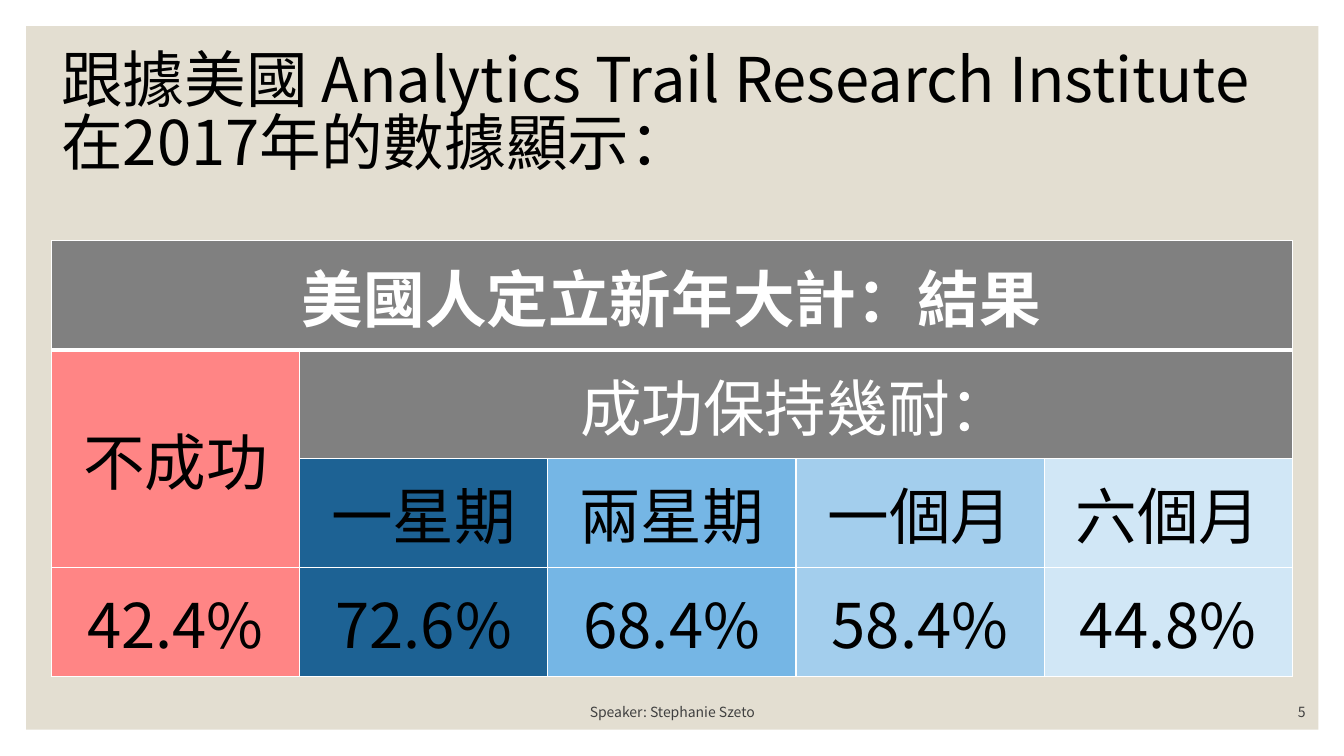
from dataclasses import dataclass
from typing import Any

from lxml import etree
from pptx import Presentation
from pptx import util as u
from pptx.dml.color import RGBColor
from pptx.enum import shapes, text
from pptx.oxml.ns import qn

FONT = "Noto Sans CJK SC"
LEFT, CENTER, RIGHT = text.PP_ALIGN.LEFT, text.PP_ALIGN.CENTER, text.PP_ALIGN.RIGHT
TOP, BOTTOM = text.MSO_ANCHOR.TOP, text.MSO_ANCHOR.BOTTOM
WHITE, BLACK, GREY, RED = "FFFFFF", "000000", "808080", "FF8585"


@dataclass
class Label:
    words: str
    left: float
    top: float
    width: float
    height: float
    size: float
    color: str
    align: Any = CENTER
    anchor: Any = BOTTOM
    after: float = 0
    line: float = 1.0


@dataclass
class Cell:
    words: str
    row: int
    col: int
    fill: str
    color: str = BLACK
    rows: int = 1
    cols: int = 1
    bold: bool = False


@dataclass
class Term:
    name: str
    share: str
    fill: str


LABELS = [
    Label("跟據美國 Analytics Trail Research Institute在2017年的數據顯示：",
          36.72, 33.84, 895.68, 400.32, 44, BLACK, LEFT, TOP, 10, 0.85),
    Label("Speaker: Stephanie Szeto", 275, 496.8, 410.4, 21.6, 10, "404040"),
    Label("5", 824.4, 496.8, 115.2, 21.6, 10, "404040", RIGHT),
]

TERMS = [
    Term("一星期", "72.6%", "1D6294"),
    Term("兩星期", "68.4%", "75B6E5"),
    Term("一個月", "58.4%", "A3CEED"),
    Term("六個月", "44.8%", "D1E7F6"),
]

ROWS, COLS = 4, len(TERMS) + 1


def paint(color: Any, code: str) -> None:
    color.rgb = RGBColor.from_string(code)


def fill(part: Any, code: str) -> None:
    part.fill.solid()
    paint(part.fill.fore_color, code)


def write(frame: Any, words: str, size: float, color: str,
          align: Any, bold: bool = False) -> Any:
    para = frame.paragraphs[0]
    para.text = words
    para.alignment = align
    font = para.font
    font.size, font.bold, font.name = u.Pt(size), bold, FONT
    paint(font.color, color)
    props = para._p.pPr.find(qn("a:defRPr"))
    etree.SubElement(props, qn("a:ea"), typeface=FONT)
    return para


def add_label(slide: Any, label: Label) -> None:
    box = slide.shapes.add_textbox(u.Pt(label.left), u.Pt(label.top),
                                   u.Pt(label.width), u.Pt(label.height))
    frame = box.text_frame
    frame.word_wrap = True
    frame.vertical_anchor = label.anchor
    para = write(frame, label.words, label.size, label.color, label.align)
    para.space_after = u.Pt(label.after)
    para.line_spacing = label.line


def add_edges(cell: Any, row: int) -> None:
    """White rules, with a heavy one under the heading row."""
    widths = {"L": 1, "R": 1, "T": 3 if row == 1 else 1, "B": 3 if row == 0 else 1}
    props = cell._tc.get_or_add_tcPr()
    for side, width in widths.items():
        line = etree.SubElement(props, qn(f"a:ln{side}"), w=str(u.Pt(width)))
        solid = etree.SubElement(line, qn("a:solidFill"))
        etree.SubElement(solid, qn("a:srgbClr"), val=WHITE)


def list_cells() -> list[Cell]:
    cells = [
        Cell("美國人定立新年大計：結果", 0, 0, GREY, WHITE, cols=COLS, bold=True),
        Cell("不成功", 1, 0, RED, rows=2),
        Cell("成功保持幾耐：", 1, 1, GREY, WHITE, cols=COLS - 1),
        Cell("42.4%", 3, 0, RED),
    ]
    for col, term in enumerate(TERMS, 1):
        cells.append(Cell(term.name, 2, col, term.fill))
        cells.append(Cell(term.share, 3, col, term.fill))
    return cells


def add_grid(slide: Any) -> None:
    table = slide.shapes.add_table(ROWS, COLS, u.Pt(36.72), u.Pt(172),
                                   u.Pt(886.5), u.Pt(311.2)).table
    for col in table.columns:
        col.width = u.Pt(177.3)
    for row in table.rows:
        row.height = u.Pt(77.8)
    for item in list_cells():
        cell = table.cell(item.row, item.col)
        end_row, end_col = item.row + item.rows, item.col + item.cols
        for row in range(item.row, end_row):
            for col in range(item.col, end_col):
                part = table.cell(row, col)
                add_edges(part, row)
                fill(part, item.fill)
        if item.rows * item.cols > 1:
            cell.merge(table.cell(end_row - 1, end_col - 1))
        cell.vertical_anchor = text.MSO_ANCHOR.MIDDLE
        write(cell.text_frame, item.words, 44, item.color, CENTER, item.bold)


def main() -> None:
    deck = Presentation()
    deck.slide_width, deck.slide_height = u.Pt(960), u.Pt(540)
    slide = deck.slides.add_slide(deck.slide_layouts[6])

    # Backdrop
    fill(slide.background, WHITE)
    panel = slide.shapes.add_shape(shapes.MSO_SHAPE.RECTANGLE, u.Pt(18.72),
                                   u.Pt(18.72), u.Pt(923), u.Pt(502.5))
    panel.shadow.inherit = False
    fill(panel, "E3DED1")
    panel.line.fill.background()

    # Title and footer
    for label in LABELS:
        add_label(slide, label)

    # Results
    add_grid(slide)

    deck.save("out.pptx")


if __name__ == "__main__":
    main()
